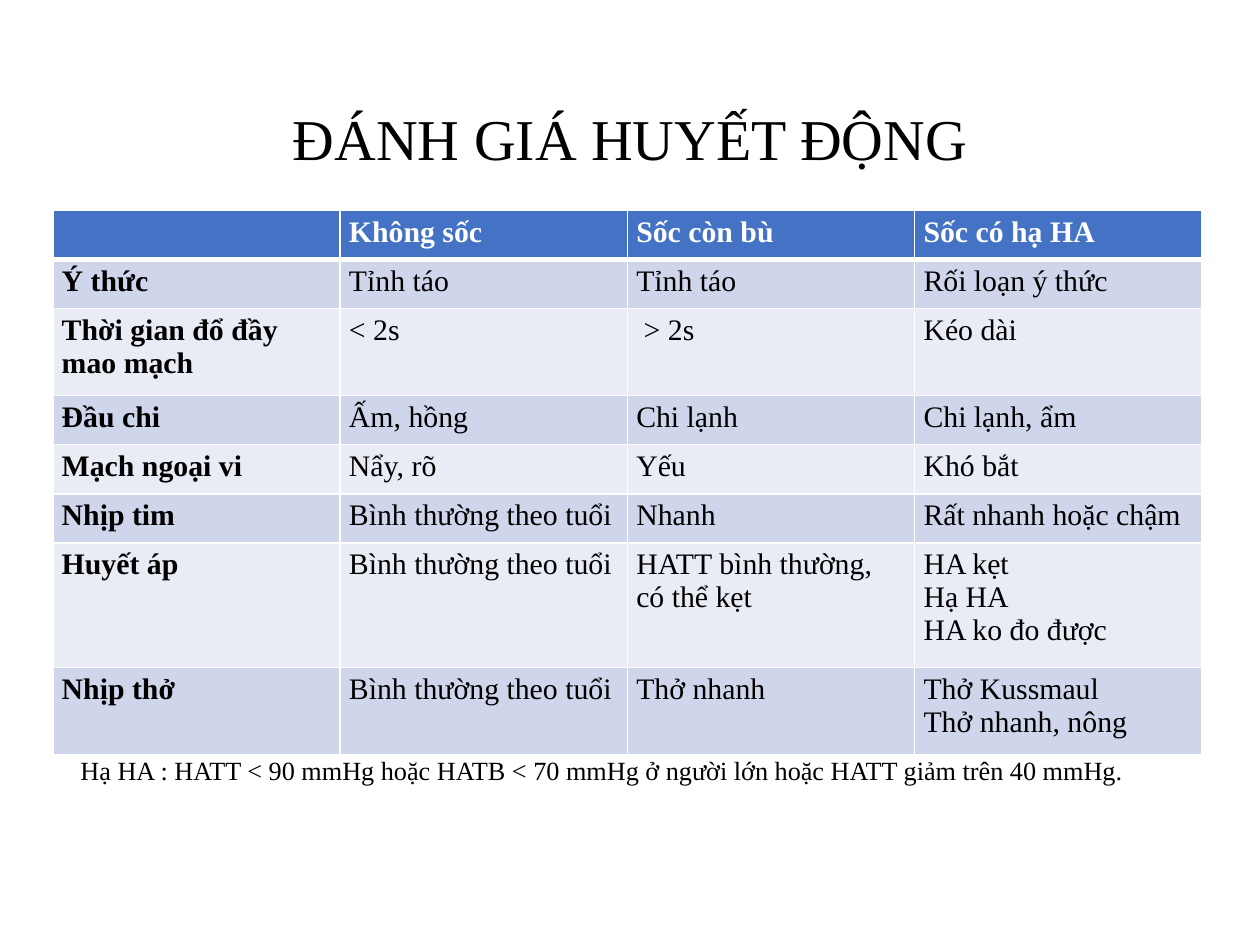
from lxml.etree import SubElement
from pptx import Presentation
from pptx.dml.color import RGBColor
from pptx.enum.text import MSO_ANCHOR, MSO_AUTO_SIZE, PP_ALIGN
from pptx.oxml.ns import qn
from pptx.util import Inches, Pt

TITLE = "ĐÁNH GIÁ HUYẾT ĐỘNG"
NOTE = ("Hạ HA : HATT < 90 mmHg hoặc HATB < 70 mmHg ở người lớn "
        "hoặc HATT giảm trên 40 mmHg.")
ROWS = [
    ("", "Không sốc", "Sốc còn bù", "Sốc có hạ HA"),
    ("Ý thức", "Tỉnh táo", "Tỉnh táo", "Rối loạn ý thức"),
    ("Thời gian đổ đầy mao mạch", "< 2s", " > 2s", "Kéo dài"),
    ("Đầu chi", "Ấm, hồng", "Chi lạnh", "Chi lạnh, ẩm"),
    ("Mạch ngoại vi", "Nẩy, rõ", "Yếu", "Khó bắt"),
    ("Nhịp tim", "Bình thường theo tuổi", "Nhanh", "Rất nhanh hoặc chậm"),
    ("Huyết áp", "Bình thường theo tuổi", "HATT bình thường, có thể kẹt",
     "HA kẹt\nHạ HA\nHA ko đo được"),
    ("Nhịp thở", "Bình thường theo tuổi", "Thở nhanh",
     "Thở Kussmaul\nThở nhanh, nông"),
]
LINES_PER_ROW = [1, 1, 2, 1, 1, 1, 3, 2]

COLORS = {"header": "4472C4", "odd": "CFD5EA", "even": "E9EBF5",
          "white": "FFFFFF", "black": "000000"}
FONT = "Times New Roman"
COLUMN_WIDTH = 2.28
FIRST_LINE, EXTRA_LINE = 0.39, 0.3


def write(frame, text, size, color="black", bold=False, align=None, spacing=None):
    for index, line in enumerate(text.split("\n")):
        paragraph = frame.paragraphs[0] if index == 0 else frame.add_paragraph()
        paragraph.alignment = align
        paragraph.line_spacing = spacing
        if not line:
            continue
        run = paragraph.add_run()
        run.text = line
        run.font.name = FONT
        run.font.size = Pt(size)
        run.font.bold = bold
        run.font.color.rgb = RGBColor.from_string(COLORS[color])


def place(shape, left, top, width, height):
    shape.left, shape.top = Inches(left), Inches(top)
    shape.width, shape.height = Inches(width), Inches(height)


def set_borders(cell, color, **widths):
    """Give the cell's sides line widths in points; the fill must come later."""
    properties = cell._tc.get_or_add_tcPr()
    for side, width in widths.items():
        line = SubElement(properties, qn(f"a:ln{side}"), w=str(Pt(width)))
        fill = SubElement(line, qn("a:solidFill"))
        SubElement(fill, qn("a:srgbClr"), val=COLORS[color])


def add_assessment_table(slide):
    heights = [FIRST_LINE + EXTRA_LINE * (lines - 1) for lines in LINES_PER_ROW]
    columns = len(ROWS[0])
    table = slide.shapes.add_table(
        len(ROWS), columns, Inches(0.42), Inches(1.67),
        Inches(COLUMN_WIDTH * columns), Inches(sum(heights))).table
    for column in table.columns:
        column.width = Inches(COLUMN_WIDTH)
    for r, (texts, height) in enumerate(zip(ROWS, heights)):
        table.rows[r].height = Inches(height)
        header = r == 0
        fill = "header" if header else "odd" if r % 2 else "even"
        for c, text in enumerate(texts):
            cell = table.cell(r, c)
            cell.margin_left = cell.margin_right = Inches(0.07)
            cell.margin_top = cell.margin_bottom = Inches(0.04)
            set_borders(cell, "white", L=1, R=1, T=3 if r == 1 else 1,
                        B=3 if header else 1)
            cell.fill.solid()
            cell.fill.fore_color.rgb = RGBColor.from_string(COLORS[fill])
            write(cell.text_frame, text, 17, color="white" if header else "black",
                  bold=header or c == 0)


def main():
    presentation = Presentation()
    presentation.slide_width, presentation.slide_height = Inches(10), Inches(7.5)
    slide = presentation.slides.add_slide(presentation.slide_layouts[5])

    title = slide.shapes.title
    place(title, 0.69, 0.4, 8.62, 1.45)
    title.text_frame.vertical_anchor = MSO_ANCHOR.MIDDLE
    write(title.text_frame, TITLE, 33, align=PP_ALIGN.CENTER, spacing=0.9)

    add_assessment_table(slide)

    note = slide.shapes.add_textbox(Inches(0.54), Inches(5.94), Inches(9), Inches(0.35))
    note.text_frame.word_wrap = True
    note.text_frame.auto_size = MSO_AUTO_SIZE.SHAPE_TO_FIT_TEXT
    write(note.text_frame, NOTE, 15, align=PP_ALIGN.JUSTIFY)

    presentation.save("out.pptx")


if __name__ == "__main__":
    main()
